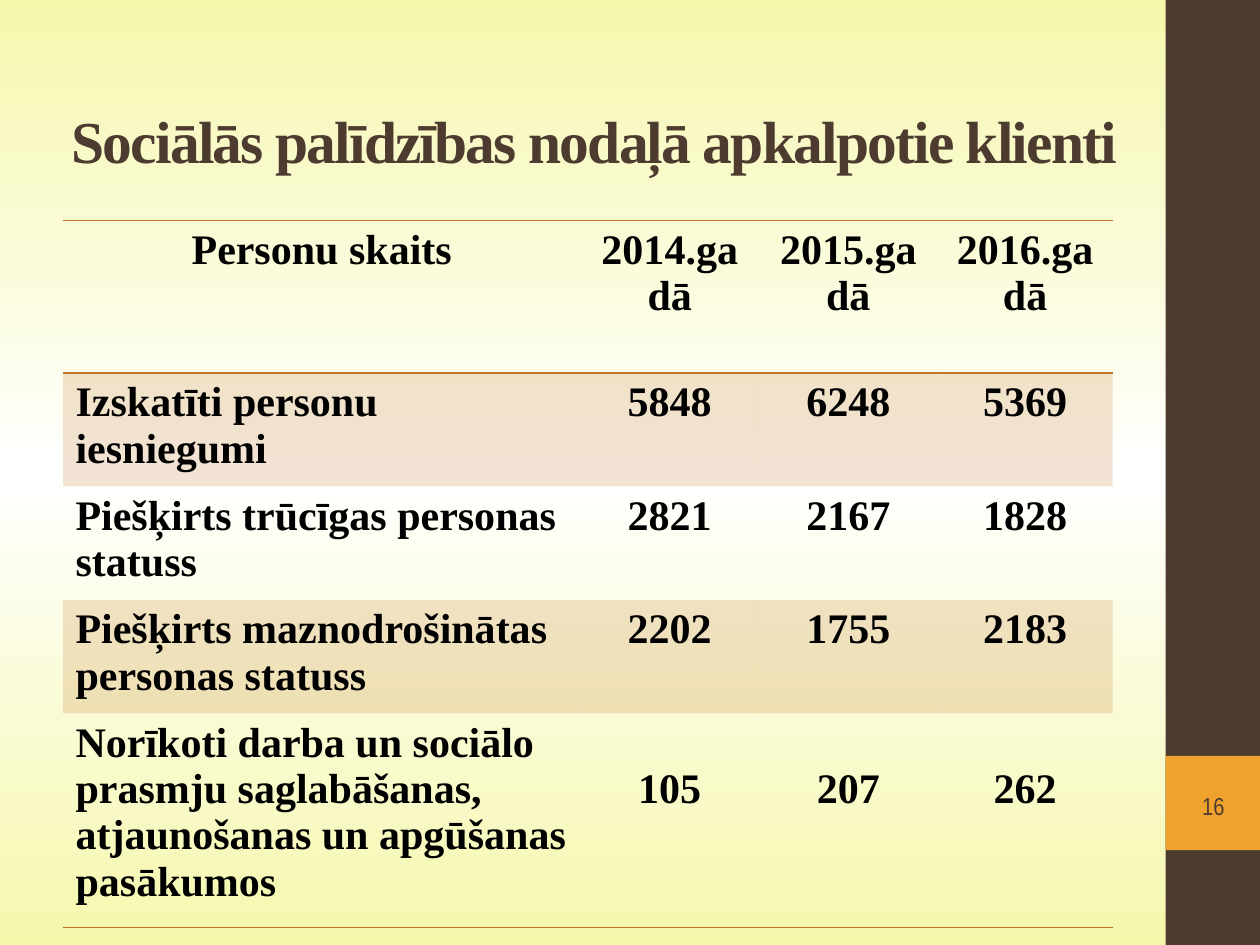
from copy import deepcopy
from dataclasses import dataclass

from lxml import etree
from pptx import Presentation
from pptx.dml.color import RGBColor
from pptx.enum.shapes import MSO_SHAPE
from pptx.enum.text import MSO_ANCHOR, MSO_AUTO_SIZE, PP_ALIGN
from pptx.oxml.ns import qn
from pptx.util import Cm, Pt

RECTANGLE = MSO_SHAPE.RECTANGLE
MIDDLE, TOP = MSO_ANCHOR.MIDDLE, MSO_ANCHOR.TOP
LEFT, CENTER = PP_ALIGN.LEFT, PP_ALIGN.CENTER
NO_AUTO_SIZE = MSO_AUTO_SIZE.NONE
TITLE_ONLY_LAYOUT = 5
PLAIN_TABLE_STYLE = "{2D5ABB26-0587-4C30-8999-92F81FD0307C}"


@dataclass(frozen=True)
class Theme:
    brown: str = "4E3B30"
    orange: str = "F0A22E"
    rust: str = "C17529"
    black: str = "000000"
    background: tuple = ("F5F7AD", "FFFFFF", "F5F7AD")
    serif: str = "Times New Roman"
    narrow: str = "Arial Narrow"
    title_size: int = 34
    table_size: int = 24
    number_size: int = 14
    band_opacity: int = 20


def write_text(frame, text, *, font, size, color, bold=False, align=CENTER, anchor=MIDDLE, spacing=0):
    frame.word_wrap = True
    frame.vertical_anchor = anchor
    paragraph = frame.paragraphs[0]
    paragraph.alignment = align
    run = paragraph.add_run()
    run.text = text
    run.font.name = font
    run.font.size = Pt(size)
    run.font.bold = bold
    run.font.color.rgb = RGBColor.from_string(color)
    if spacing:
        run.font._element.set("spc", str(spacing * 100))


def add_border(cell, side, color):
    line = etree.Element(qn(f"a:ln{side}"), w=str(Pt(1)))
    fill = etree.SubElement(line, qn("a:solidFill"))
    etree.SubElement(fill, qn("a:srgbClr"), val=color)
    cell._tc.get_or_add_tcPr().insert(0, line)


class SlideBuilder:
    def __init__(self, slide, theme):
        self.slide = slide
        self.theme = theme

    def background(self):
        fill = self.slide.background.fill
        fill.gradient()
        fill.gradient_angle = 90
        stop_list = next(self.slide.element.iter(qn("a:gsLst")))
        stop_list.insert(1, deepcopy(stop_list[0]))
        for index, (stop, color) in enumerate(zip(fill.gradient_stops, self.theme.background)):
            stop.position = index / 2
            stop.color.rgb = RGBColor.from_string(color)

    def block(self, left, top, width, height, color):
        shape = self.slide.shapes.add_shape(RECTANGLE, Cm(left), Cm(top), Cm(width), Cm(height))
        shape.shadow.inherit = False
        shape.fill.solid()
        shape.fill.fore_color.rgb = RGBColor.from_string(color)
        shape.line.fill.background()

    def title(self, text, left, top, width, height):
        shape = self.slide.shapes.title
        shape.left, shape.top, shape.width, shape.height = map(Cm, (left, top, width, height))
        shape.text_frame.auto_size = NO_AUTO_SIZE
        write_text(shape.text_frame, text, font=self.theme.serif, size=self.theme.title_size,
                   color=self.theme.brown, bold=True, spacing=-1)

    def page_number(self, text, left, top, width, height):
        shape = self.slide.shapes.add_textbox(Cm(left), Cm(top), Cm(width), Cm(height))
        write_text(shape.text_frame, text, font=self.theme.narrow,
                   size=self.theme.number_size, color=self.theme.brown)

    def table(self, rows, left, top, widths, heights):
        frame = self.slide.shapes.add_table(len(rows), len(widths), Cm(left), Cm(top),
                                            Cm(sum(widths)), Cm(sum(heights)))
        next(frame.element.iter(qn("a:tableStyleId"))).text = PLAIN_TABLE_STYLE
        table = frame.table
        table.horz_banding = False
        for column, width in zip(table.columns, widths):
            column.width = Cm(width)
        for row, height in zip(table.rows, heights):
            row.height = Cm(height)
        last = len(rows) - 1
        for row_index, values in enumerate(rows):
            for column_index, value in enumerate(values):
                cell = table.cell(row_index, column_index)
                is_label = row_index > 0 and column_index == 0
                write_text(cell.text_frame, value, font=self.theme.serif,
                           size=self.theme.table_size, color=self.theme.black, bold=True,
                           align=LEFT if is_label else CENTER, anchor=TOP)
                if row_index == last and not is_label:
                    cell.margin_top = Cm(1.07)
                self.fill_cell(cell, banded=row_index % 2 == 1)
                if row_index in (0, last):
                    add_border(cell, "B", self.theme.rust)
                if row_index == 0:
                    add_border(cell, "T", self.theme.rust)

    def fill_cell(self, cell, banded):
        if not banded:
            cell.fill.background()
            return
        cell.fill.solid()
        cell.fill.fore_color.rgb = RGBColor.from_string(self.theme.rust)
        color = next(cell._tc.tcPr.iter(qn("a:srgbClr")))
        etree.SubElement(color, qn("a:alpha"), val=str(self.theme.band_opacity * 1000))


def main():
    presentation = Presentation()
    presentation.slide_width, presentation.slide_height = Cm(25.4), Cm(19.05)
    theme = Theme()
    slide = presentation.slides.add_slide(presentation.slide_layouts[TITLE_ONLY_LAYOUT])
    builder = SlideBuilder(slide, theme)
    builder.background()
    builder.block(23.5, 0, 1.9, 19.05, theme.brown)
    builder.block(23.5, 15.24, 1.9, 1.9, theme.orange)
    builder.title("Sociālās palīdzības nodaļā apkalpotie klienti", 0.89, 1.12, 22.2, 3.4)
    builder.page_number("16", 23.7, 15.7, 1.52, 1.09)
    rows = [
        ("Personu skaits", "2014.gadā", "2015.gadā", "2016.gadā"),
        ("Izskatīti personu iesniegumi", "5848", "6248", "5369"),
        ("Piešķirts trūcīgas personas statuss", "2821", "2167", "1828"),
        ("Piešķirts maznodrošinātas personas statuss", "2202", "1755", "2183"),
        ("Norīkoti darba un sociālo prasmju saglabāšanas, atjaunošanas un apgūšanas pasākumos",
         "105", "207", "262"),
    ]
    builder.table(rows, 1.27, 4.45, widths=(10.43, 3.6, 3.6, 3.53),
                  heights=(3.07, 2.13, 2.13, 2.13, 3.99))
    presentation.save("out.pptx")


if __name__ == "__main__":
    main()
